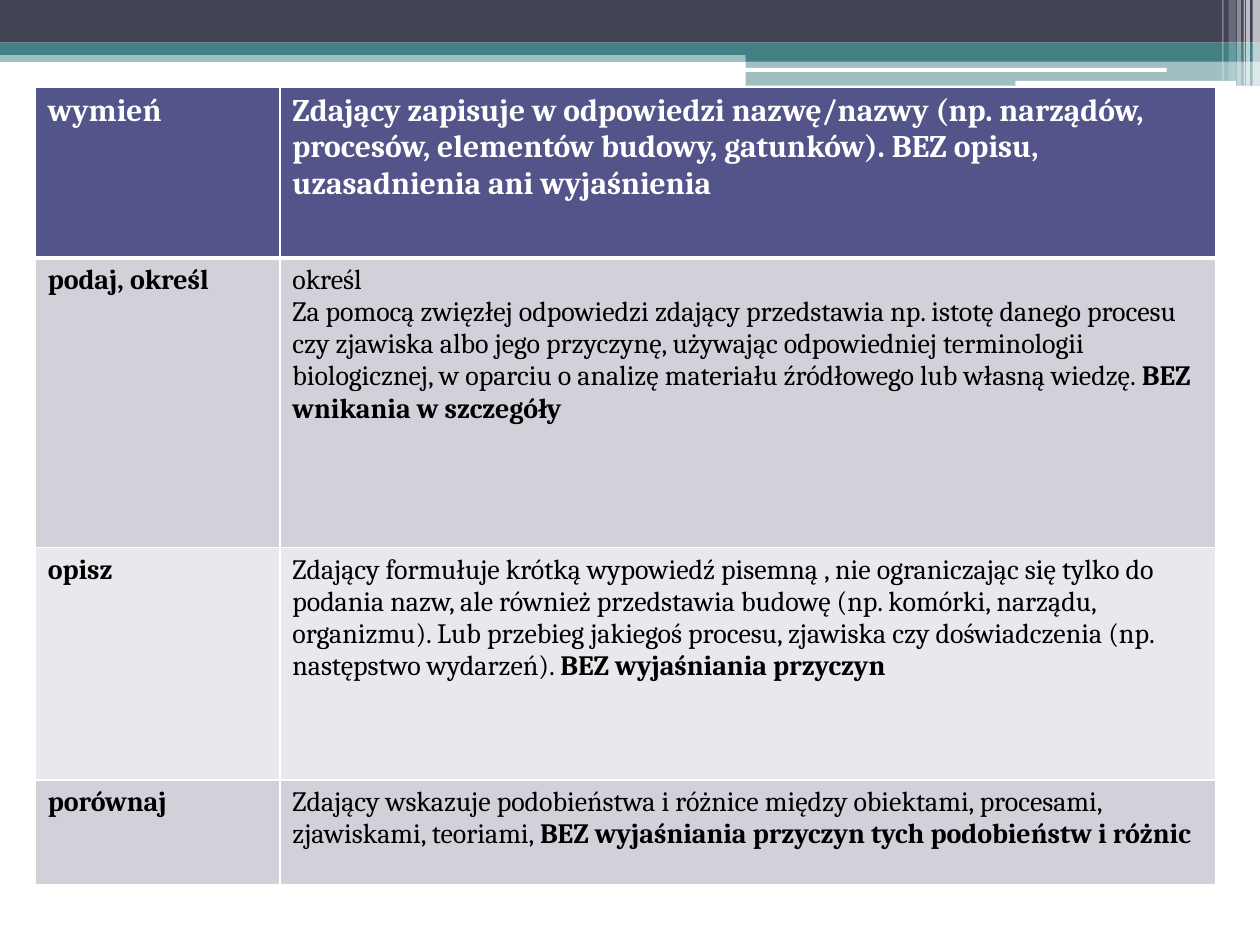
from lxml.etree import SubElement
from pptx import Presentation
from pptx.dml.color import RGBColor
from pptx.enum.shapes import MSO_SHAPE
from pptx.oxml.ns import qn
from pptx.util import Cm, Pt

FONT = "Cambria"
COLORS = {
    "white": "FFFFFF", "black": "000000", "slate": "424456", "teal": "438086",
    "header": "53548A", "odd": "D1D1DA", "even": "E9E9ED",
}

# Header decoration: left, top, width, height (cm), colour, opacity (%)
BANDS = [
    (0, 1.02, 25.4, 0.23, "teal", 50),
    (0, 0, 25.4, 0.86, "slate", 100),
    (0, 0.86, 25.4, 0.25, "teal", 100),
    (15.03, 0.99, 10.37, 0.25, "teal", 100),
    (15.03, 1.23, 10.37, 0.5, "teal", 50),
]
ROUNDED_LINES = [
    (15.01, 1.37, 8.51, 0.08, "white", 100),
    (20.47, 1.63, 4.45, 0.1, "white", 100),
]
# Stripes at the right edge: left, width, height (cm), opacity (%)
STRIPES = [
    (25.25, 0.15, 1.73, 65), (25.12, 0.08, 1.73, 65), (25.07, 0.03, 1.73, 60),
    (24.94, 0.08, 1.73, 40), (24.77, 0.15, 1.63, 20), (24.64, 0.03, 1.63, 30),
]

# Each cell is a list of paragraphs, each paragraph a list of (text, bold) runs
ROWS = [
    ([[("wymień", True)]],
     [[("Zdający zapisuje w odpowiedzi nazwę/nazwy (np. narządów, procesów, "
        "elementów budowy, gatunków). BEZ opisu, uzasadnienia ani wyjaśnienia", True)]]),
    ([[("podaj, określ", True)]],
     [[("określ", False)],
      [("Za pomocą zwięzłej odpowiedzi zdający przedstawia np. istotę danego procesu "
        "czy zjawiska albo jego przyczynę, używając odpowiedniej terminologii "
        "biologicznej, w oparciu o analizę materiału źródłowego lub własną wiedzę. ", False),
       ("BEZ wnikania w szczegóły", True)]]),
    ([[("opisz", True)]],
     [[("Zdający formułuje krótką wypowiedź pisemną , nie ograniczając się tylko do "
        "podania nazw, ale również przedstawia budowę (np. komórki, narządu, "
        "organizmu). Lub przebieg jakiegoś procesu, zjawiska czy doświadczenia "
        "(np. następstwo wydarzeń). ", False),
       ("BEZ wyjaśniania przyczyn", True)]]),
    ([[("porównaj", True)]],
     [[("Zdający wskazuje podobieństwa i różnice między obiektami, procesami, "
        "zjawiskami, teoriami, ", False),
       ("BEZ wyjaśniania przyczyn tych podobieństw i różnic", True)]]),
]
TABLE_LEFT, TABLE_TOP = 0.71, 1.75
COL_WIDTHS = [4.93, 18.87]
ROW_HEIGHTS = [3.45, 5.84, 4.68, 2.11]


def rgb(name):
    return RGBColor.from_string(COLORS[name])


def add_bar(s, kind, left, top, width, height, color, opacity):
    sp = s.shapes.add_shape(kind, Cm(left), Cm(top), Cm(width), Cm(height))
    sp.shadow.inherit = False
    sp.line.fill.background()
    sp.fill.solid()
    sp.fill.fore_color.rgb = rgb(color)
    if opacity < 100:
        clr = sp.fill._xPr.find(qn("a:solidFill"))[0]
        SubElement(clr, qn("a:alpha"), val=str(opacity * 1000))


def set_borders(cell, top, bottom):
    tc_pr = cell._tc.get_or_add_tcPr()
    for side, width in (("L", 1), ("R", 1), ("T", top), ("B", bottom)):
        ln = SubElement(tc_pr, qn(f"a:ln{side}"), w=str(Pt(width)))
        SubElement(SubElement(ln, qn("a:solidFill")), qn("a:srgbClr"), val=COLORS["white"])


def write_cell(cell, paragraphs, size, color):
    tf = cell.text_frame
    for i, runs in enumerate(paragraphs):
        p = tf.add_paragraph() if i else tf.paragraphs[0]
        for text, bold in runs:
            r = p.add_run()
            r.text = text
            r.font.name = FONT
            r.font.size = Pt(size)
            r.font.bold = bold
            r.font.color.rgb = rgb(color)


prs = Presentation()
prs.slide_width, prs.slide_height = Cm(25.4), Cm(19.05)
s = prs.slides.add_slide(prs.slide_layouts[6])

# Header decoration
for band in BANDS:
    add_bar(s, MSO_SHAPE.RECTANGLE, *band)
for line in ROUNDED_LINES:
    add_bar(s, MSO_SHAPE.ROUNDED_RECTANGLE, *line)
for left, width, height, opacity in STRIPES:
    add_bar(s, MSO_SHAPE.RECTANGLE, left, 0, width, height, "white", opacity)

# Table of command verbs
table = s.shapes.add_table(
    len(ROWS), len(COL_WIDTHS), Cm(TABLE_LEFT), Cm(TABLE_TOP),
    Cm(sum(COL_WIDTHS)), Cm(sum(ROW_HEIGHTS))).table
for col, width in zip(table.columns, COL_WIDTHS):
    col.width = Cm(width)
for i, (row, height) in enumerate(zip(ROWS, ROW_HEIGHTS)):
    table.rows[i].height = Cm(height)
    fill = "header" if i == 0 else ("even", "odd")[i % 2]
    size, color = (18, "white") if i == 0 else (16, "black")
    for j, paragraphs in enumerate(row):
        cell = table.cell(i, j)
        set_borders(cell, 3 if i == 1 else 1, 3 if i == 0 else 1)
        cell.fill.solid()
        cell.fill.fore_color.rgb = rgb(fill)
        write_cell(cell, paragraphs, size, color)

prs.save("out.pptx")
